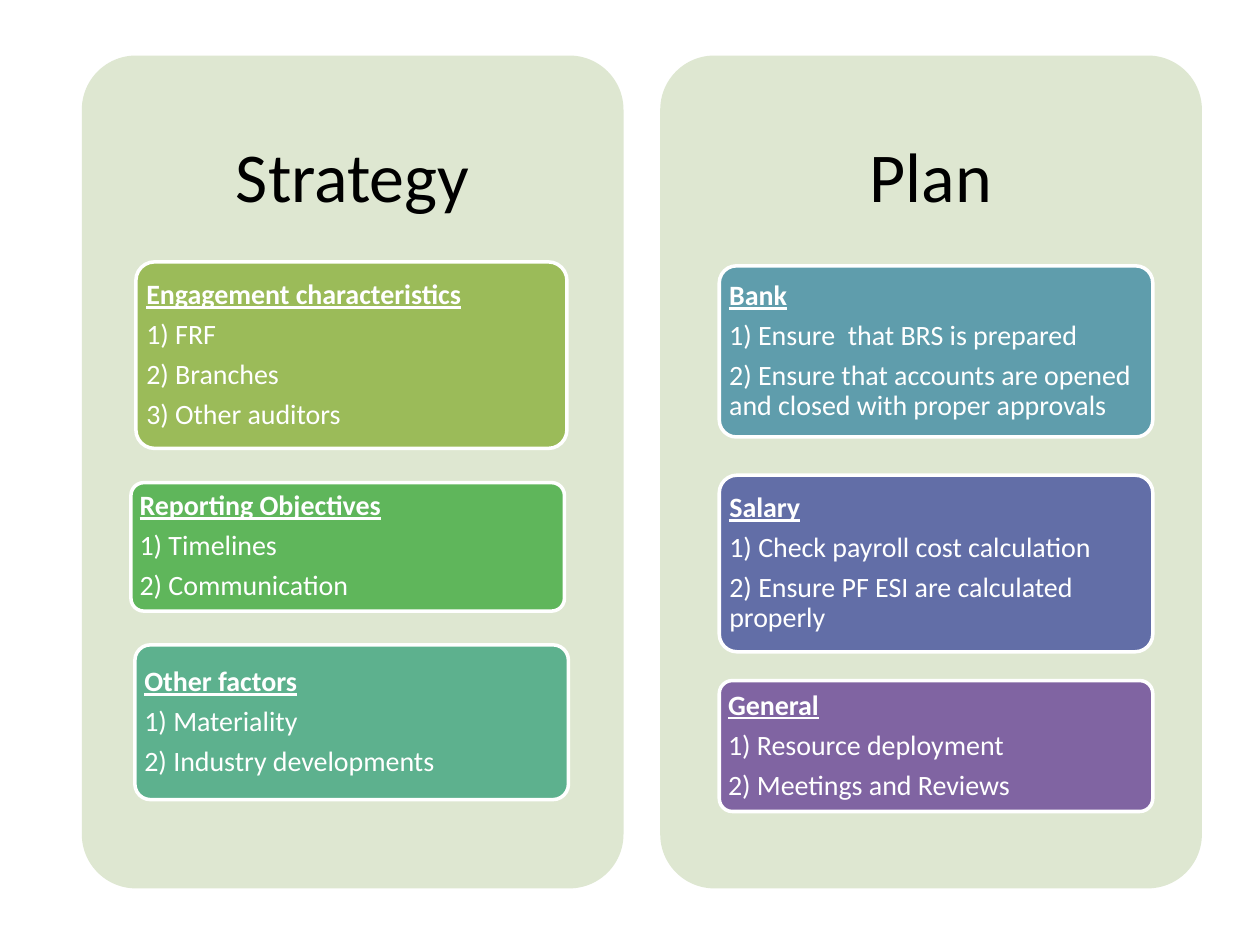
from pptx import Presentation
from pptx.dml.color import RGBColor
from pptx.enum.shapes import MSO_SHAPE
from pptx.enum.text import MSO_ANCHOR, PP_ALIGN
from pptx.util import Cm, Pt

ROUNDED = MSO_SHAPE.ROUNDED_RECTANGLE
MIDDLE = MSO_ANCHOR.MIDDLE
LEFT, CENTER = PP_ALIGN.LEFT, PP_ALIGN.CENTER

COLORS = {
    "panel": "DEE7D1",
    "title": "000000",
    "white": "FFFFFF",
    "olive": "9BBB59",
    "green": "5FB65B",
    "mint": "5DB18E",
    "teal": "5F9DAC",
    "indigo": "626EA7",
    "purple": "8064A2",
}

PANEL_TOP, PANEL_WIDTH, PANEL_HEIGHT = 1.12, 10.92, 16.79
TITLE_HEIGHT = 5.03

PANELS = [
    ("Strategy", 1.65, [
        ("olive", (2.74, 5.28, 8.69, 3.76), "Engagement characteristics",
         ["FRF", "Branches", "Other auditors"]),
        ("green", (2.64, 9.73, 8.74, 2.59), "Reporting Objectives",
         ["Timelines", "Communication"]),
        ("mint", (2.72, 13, 8.74, 3.12), "Other factors",
         ["Materiality", "Industry developments"]),
    ]),
    ("Plan", 13.31, [
        ("teal", (14.5, 5.36, 8.74, 3.45), "Bank",
         ["Ensure  that BRS is prepared",
          "Ensure that accounts are opened and closed with proper approvals"]),
        ("indigo", (14.5, 9.58, 8.74, 3.56), "Salary",
         ["Check payroll cost calculation",
          "Ensure PF ESI are calculated properly"]),
        ("purple", (14.5, 13.72, 8.74, 2.64), "General",
         ["Resource deployment", "Meetings and Reviews"]),
    ]),
]


def apply(target, values):
    """Set each named attribute of the target."""
    for name, value in values.items():
        setattr(target, name, value)


class Board:
    """Draws panels, titles and cards in one style on the current slide."""

    font = "Calibri"

    def __init__(self, slide):
        self.slide = slide

    def rounded(self, box, color):
        """Add a borderless rounded rectangle."""
        body = self.slide.shapes.add_shape(ROUNDED, *map(Cm, box))
        body.adjustments[0] = 0.1
        body.shadow.inherit = False
        body.fill.solid()
        body.fill.fore_color.rgb = RGBColor.from_string(COLORS[color])
        body.line.fill.background()
        return body

    def frame(self, holder, side, vertical):
        """Prepare the text frame of a shape and return it."""
        apply(holder.text_frame, {
            "word_wrap": True, "vertical_anchor": MIDDLE,
            "margin_left": Cm(side), "margin_right": Cm(side),
            "margin_top": Cm(vertical), "margin_bottom": Cm(vertical),
        })
        return holder.text_frame

    def add_words(self, paragraph, words, size, color, align, strong=False):
        """Fill one paragraph with a formatted run."""
        apply(paragraph, {"alignment": align, "line_spacing": 0.9,
                          "space_after": Pt(size * 0.35)})
        run = paragraph.add_run()
        run.text = words
        apply(run.font, {"name": self.font, "size": Pt(size),
                         "bold": strong, "underline": strong})
        run.font.color.rgb = RGBColor.from_string(COLORS[color])

    def panel(self, title, left):
        """Add a tall panel with its title at the top."""
        self.rounded((left, PANEL_TOP, PANEL_WIDTH, PANEL_HEIGHT), "panel")
        heading = self.slide.shapes.add_textbox(
            *map(Cm, (left, PANEL_TOP, PANEL_WIDTH, TITLE_HEIGHT)))
        frame = self.frame(heading, 0.43, 0.43)
        self.add_words(frame.paragraphs[0], title, 40, "title", CENTER)

    def card(self, color, box, heading, points):
        """Add an outlined card with a heading and numbered points."""
        body = self.rounded(box, color)
        body.line.color.rgb = RGBColor.from_string(COLORS["white"])
        body.line.width = Pt(2)
        frame = self.frame(body, 0.1, 0.08)
        self.add_words(frame.paragraphs[0], heading, 16, "white", LEFT, strong=True)
        for number, point in enumerate(points, 1):
            self.add_words(frame.add_paragraph(), f"{number}) {point}",
                           16, "white", LEFT)


def main():
    """Build the slide and save it."""
    deck = Presentation()
    apply(deck, {"slide_width": Cm(25.4), "slide_height": Cm(19.05)})
    board = Board(deck.slides.add_slide(deck.slide_layouts[6]))
    for title, left, cards in PANELS:
        board.panel(title, left)
        for card in cards:
            board.card(*card)
    deck.save("out.pptx")


if __name__ == "__main__":
    main()
